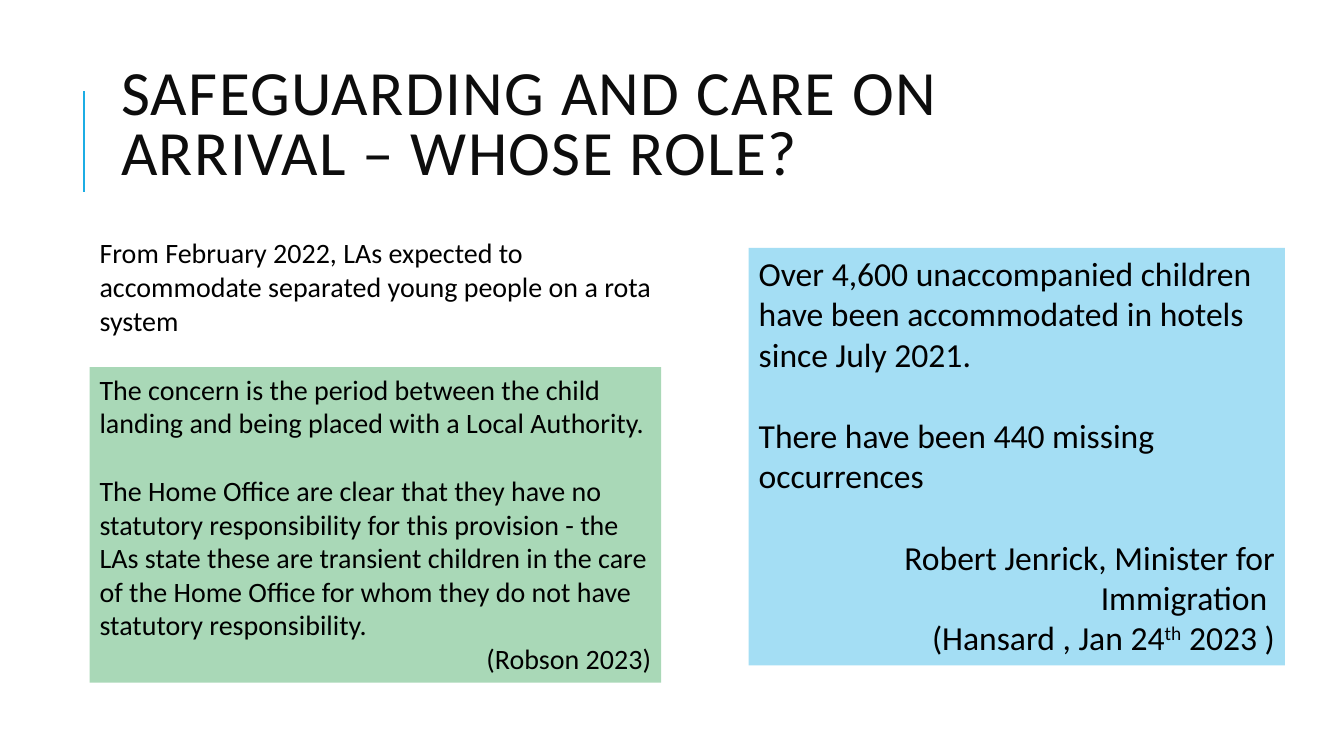
from pptx import Presentation
from pptx.dml.color import RGBColor
from pptx.enum.shapes import MSO_CONNECTOR as Connector, MSO_SHAPE as Shape
from pptx.enum.text import MSO_ANCHOR as Anchor, MSO_AUTO_SIZE as AutoSize, PP_ALIGN as Align
from pptx.oxml.ns import qn
from pptx.util import Cm, Pt
from lxml.etree import SubElement


def color(value):
    return RGBColor.from_string(value)


def style(run, size, hex_color):
    run.font.name = "Calibri"
    run.font.size = Pt(size)
    run.font.color.rgb = color(hex_color)


prs = Presentation()
prs.slide_width, prs.slide_height = Cm(33.87), Cm(19.05)
slide = prs.slides.add_slide(prs.slide_layouts[5])

# Accent line beside the title
accent = slide.shapes.add_connector(Connector.STRAIGHT, Cm(2.12), Cm(4.83), Cm(2.12), Cm(2.29))
accent.line.color.rgb = color("1CADE4")
accent.line.width = Pt(1.5)
SubElement(accent.element.spPr, qn("a:effectLst"))

# Title
title = slide.shapes.title
title.left, title.top, title.width, title.height = Cm(2.8), Cm(1.12), Cm(21.23), Cm(4.17)
heading = title.text_frame
heading.text = "SAFEGUARDING AND CARE ON ARRIVAL – WHOSE ROLE?"
heading.word_wrap = True
heading.auto_size = AutoSize.NONE
heading.vertical_anchor = Anchor.MIDDLE
heading.paragraphs[0].alignment = Align.LEFT
heading.paragraphs[0].line_spacing = 0.8
title_run = heading.paragraphs[0].runs[0]
style(title_run, 45, "0D0D0D")
title_run.font._element.set("spc", "100")

# Panels: box in cm, fill, text size, paragraphs (text, alignment, lines of space before)
# Text between ^ marks is superscript
panels = [
    ((18.87, 6.25, 13.51, 10.52), "A4DEF4", 24, [
        ("Over 4,600 unaccompanied children have been accommodated in hotels since July 2021.",
         Align.LEFT, 0),
        ("There have been 440 missing occurrences", Align.LEFT, 1),
        ("Robert Jenrick, Minister for Immigration ", Align.RIGHT, 1),
        ("(Hansard , Jan 24^th^ 2023 )", Align.RIGHT, 0),
    ]),
    ((2.26, 9.25, 14.4, 7.95), "A9D8B7", 20, [
        ("The concern is the period between the child landing and being placed with a "
         "Local Authority.", Align.LEFT, 0),
        ("The Home Office are clear that they have no statutory responsibility for this "
         "provision - the LAs state these are transient children in the care of the Home "
         "Office for whom they do not have statutory responsibility.", Align.LEFT, 1),
        ("(Robson 2023)", Align.RIGHT, 0),
    ]),
    ((2.26, 5.82, 14.94, 2.82), None, 20, [
        ("From February 2022, LAs expected to accommodate separated young people on a rota "
         "system", Align.LEFT, 0),
    ]),
]

for box, fill, size, statements in panels:
    place = [Cm(length) for length in box]
    if fill:
        panel = slide.shapes.add_shape(Shape.RECTANGLE, *place)
        panel.shadow.inherit = False
        panel.fill.solid()
        panel.fill.fore_color.rgb = color(fill)
        panel.line.fill.background()
    else:
        panel = slide.shapes.add_textbox(*place)
    frame = panel.text_frame
    frame.word_wrap = True
    frame.auto_size = AutoSize.SHAPE_TO_FIT_TEXT
    frame.vertical_anchor = Anchor.TOP

    for i, (statement, alignment, gap) in enumerate(statements):
        paragraph = frame.paragraphs[0] if i == 0 else frame.add_paragraph()
        paragraph.alignment = alignment
        paragraph.space_before = Pt(round(gap * size * 1.22, 1))
        for j, part in enumerate(statement.split("^")):
            run = paragraph.add_run()
            run.text = part
            style(run, size, "000000")
            if j % 2:
                run.font._element.set("baseline", "30000")

prs.save("out.pptx")
